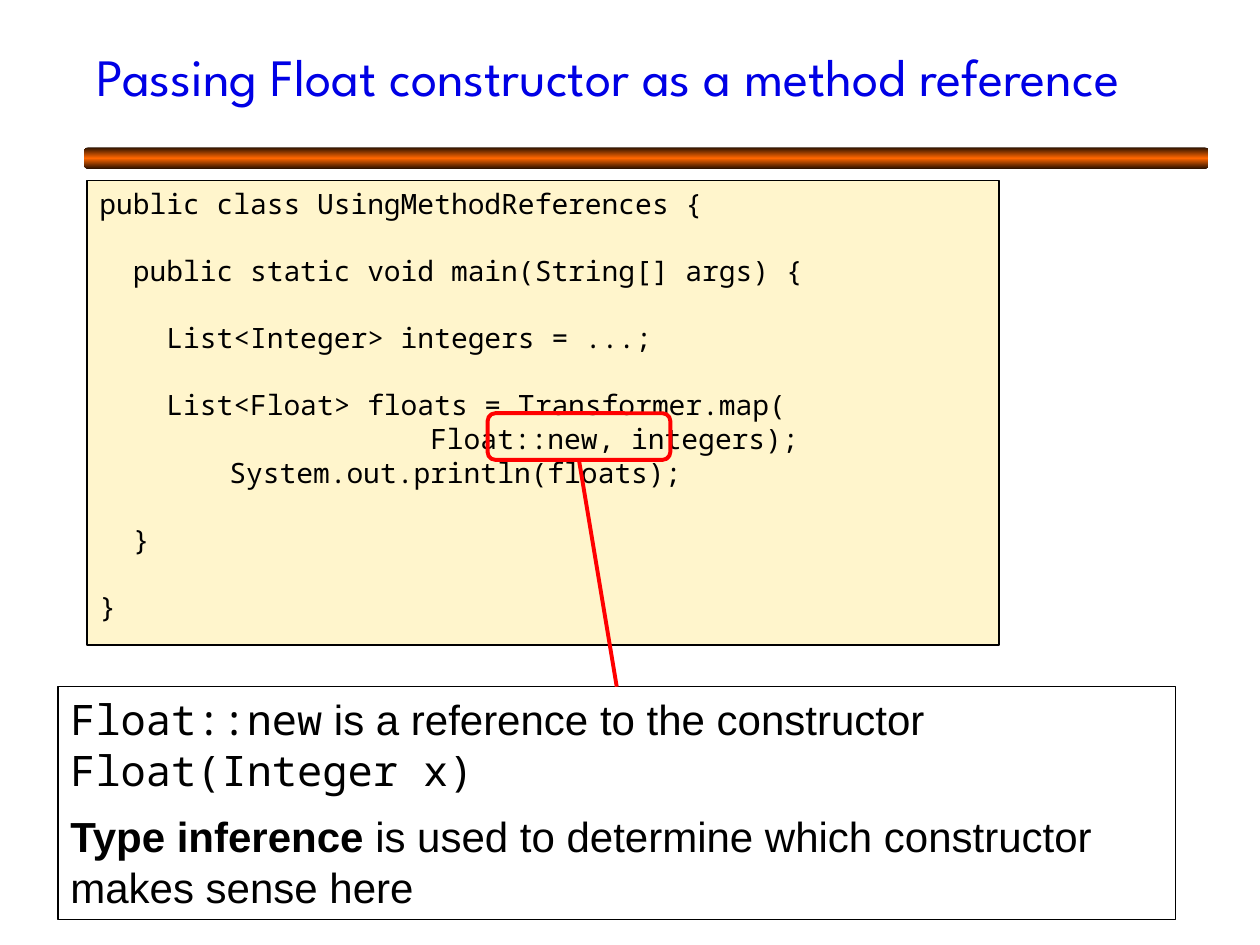
from copy import deepcopy

from pptx import Presentation
from pptx.dml.color import RGBColor
from pptx.enum.shapes import MSO_CONNECTOR as Link, MSO_SHAPE as Shape
from pptx.enum.text import MSO_ANCHOR as Anchor, PP_ALIGN as Align
from pptx.oxml.ns import qn
from pptx.util import Inches, Pt

BLACK = RGBColor(0x00, 0x00, 0x00)
WHITE = RGBColor(0xFF, 0xFF, 0xFF)
BLUE = RGBColor(0x00, 0x00, 0xE5)
RED = RGBColor(0xFF, 0x00, 0x00)
CREAM = RGBColor(0xFF, 0xF5, 0xCC)
BROWN = RGBColor(0x2A, 0x11, 0x00)
ORANGE = RGBColor(0xFF, 0x66, 0x00)

HEAD = "League Spartan"
MONO = "Noto Sans Mono"
SANS = "Arial"

CODE = """public class UsingMethodReferences {

  public static void main(String[] args) {

    List<Integer> integers = ...;

    List<Float> floats = Transformer.map(
\t                Float::new, integers);
\t    System.out.println(floats);

  }

}"""

NOTES = [
    [("Float::new", MONO, False),
     (" is a reference to the constructor ", SANS, False),
     ("Float(Integer x)", MONO, False)],
    [("Type inference", SANS, True),
     (" is used to determine which constructor makes sense here", SANS, False)],
]


class Deck:
    """Holds the style and the current slide, and draws each kind of element."""

    def __init__(self):
        self.prs = Presentation()
        self.prs.slide_width, self.prs.slide_height = Inches(10), Inches(7.5)
        self.slide = self.prs.slides.add_slide(self.prs.slide_layouts[6])
        self.shapes = self.slide.shapes

    def shape(self, kind, box, fill=None, line=None, width=0.75):
        item = self.shapes.add_shape(kind, *map(Inches, box))
        item.shadow.inherit = False
        if fill is None:
            item.fill.background()
        else:
            item.fill.solid()
            item.fill.fore_color.rgb = fill
        if line is None:
            item.line.fill.background()
        else:
            item.line.color.rgb = line
            item.line.width = Pt(width)
        return item

    def bar(self, box):
        item = self.shape(Shape.ROUNDED_RECTANGLE, box)
        item.fill.gradient()
        item.fill.gradient_angle = 90
        first = item.fill.gradient_stops[0]._gs
        first.addnext(deepcopy(first))
        stops = zip(item.fill.gradient_stops, (0, 0.5, 1), (BROWN, ORANGE, BROWN))
        for stop, place, color in stops:
            stop.position = place
            stop.color.rgb = color

    def title(self, box, text):
        frame = self.shapes.add_textbox(*map(Inches, box)).text_frame
        frame.word_wrap = True
        frame.vertical_anchor = Anchor.MIDDLE
        para = frame.paragraphs[0]
        para.text = text
        self.font(para, 30, BLUE, HEAD)

    def font(self, para, size, color, name=None):
        para.alignment = Align.LEFT
        para.font.size = Pt(size)
        para.font.color.rgb = color
        if name:
            para.font.name = name

    def panel(self, box, fill):
        item = self.shape(Shape.RECTANGLE, box, fill, BLACK)
        item.text_frame.word_wrap = True
        item.text_frame.vertical_anchor = Anchor.TOP
        return item

    def code(self, box, text):
        frame = self.panel(box, CREAM).text_frame
        pitch, gap, para = Pt(19.2), False, None
        for row in text.split("\n"):
            if not row:
                gap = True
                continue
            para = frame.add_paragraph() if para else frame.paragraphs[0]
            para.text = row
            para.line_spacing = pitch
            if gap:
                para.space_before = pitch
            self.font(para, 16, BLACK, MONO)
            gap = False

    def note(self, box, paras):
        item = self.panel(box, WHITE)
        frame = item.text_frame
        for index, parts in enumerate(paras):
            para = frame.add_paragraph() if index else frame.paragraphs[0]
            para.line_spacing = Pt(29)
            if index:
                para.space_before = Pt(9)
            self.font(para, 24, BLACK)
            for text, name, bold in parts:
                run = para.add_run()
                run.text = text
                run.font.name = name
                run.font.bold = bold
        return item

    def link(self, start, end):
        line = self.shapes.add_connector(Link.STRAIGHT, 0, 0, 0, 0)
        line.begin_connect(start, 2)
        line.end_connect(end, 0)
        line.line.color.rgb = RED
        line.line.width = Pt(2.25)
        props = line._element.spPr
        props.append(props.makeelement(qn("a:effectLst"), {}))

    def save(self):
        self.prs.save("out.pptx")


def main():
    deck = Deck()
    deck.bar((0.67, 1.17, 8.92, 0.17))
    deck.title((0.67, 0.1, 9.13, 1), "Passing Float constructor as a method reference")
    deck.code((0.69, 1.43, 7.24, 3.69), CODE)
    ring = deck.shape(Shape.ROUNDED_RECTANGLE, (3.87, 3.28, 1.45, 0.37),
                      line=RED, width=2.25)
    note = deck.note((0.46, 5.45, 8.87, 1.85), NOTES)
    deck.link(ring, note)
    deck.save()


if __name__ == "__main__":
    main()
